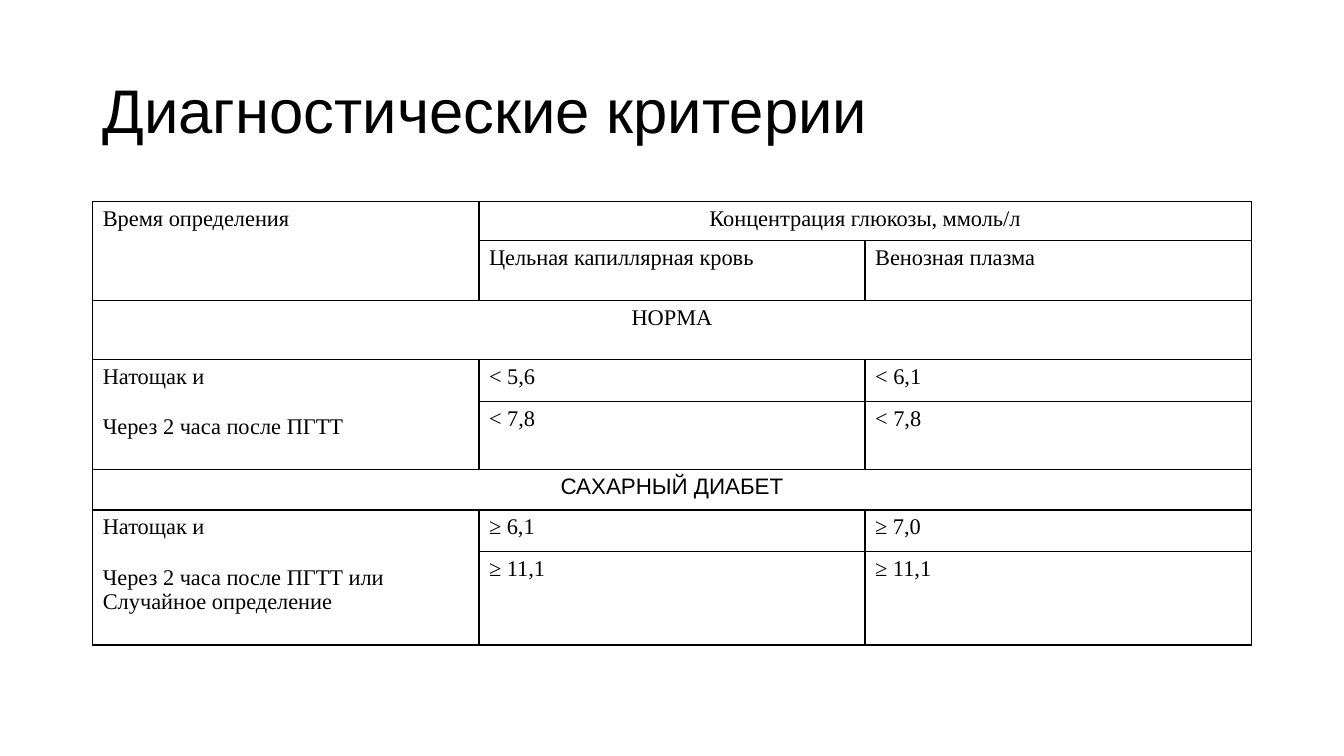
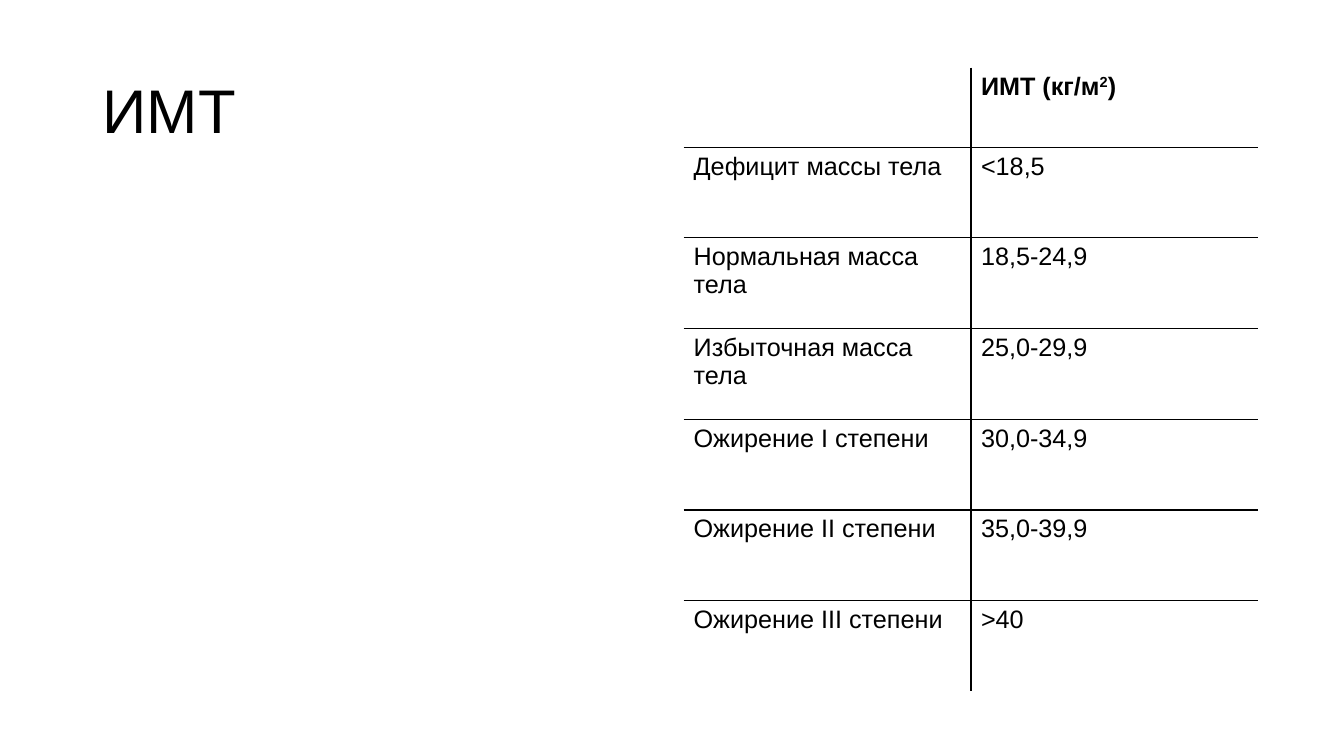
from dataclasses import dataclass
from typing import Any

from lxml import etree
from pptx import Presentation
from pptx import util as u
from pptx.dml.color import RGBColor
from pptx.enum import text
from pptx.oxml import ns

BLACK, WHITE = "000000", "FFFFFF"
SANS, SERIF = "Arial", "Times New Roman"
TITLE_FONT = {"name": SANS, "size": u.Pt(44), "bold": False}
TITLE_BOX = (0.92, 0.4, 11.5, 1.45)
CENTER = text.PP_ALIGN.CENTER


@dataclass(frozen=True)
class Run:
    text: str
    superscript: bool = False


@dataclass(frozen=True)
class Line:
    runs: tuple[Run, ...]
    gap: float = 0


@dataclass(frozen=True)
class Cell:
    row: int
    column: int
    lines: tuple[Line, ...]
    row_span: int = 1
    column_span: int = 1
    align: Any = text.PP_ALIGN.LEFT
    font: str = SANS
    bold: bool = False


@dataclass(frozen=True)
class TableSpec:
    left: float
    top: float
    columns: tuple[float, ...]
    rows: tuple[float, ...]
    size: float
    framed: bool
    cells: list[Cell]


def line(content: str, gap: float = 0) -> Line:
    return Line((Run(content),), gap)


def color(value: str) -> RGBColor:
    return RGBColor.from_string(value)


def set_values(target: Any, values: dict[str, Any]) -> None:
    for name, value in values.items():
        setattr(target, name, value)


def write_line(paragraph: Any, content: Line, font: dict[str, Any]) -> None:
    for part in content.runs:
        run = paragraph.add_run()
        run.text = part.text
        set_values(run.font, font)
        run.font.color.rgb = color(BLACK)
        if part.superscript:
            run._r.get_or_add_rPr().set("baseline", "30000")


def set_borders(cell: Any, visible: dict[str, bool]) -> None:
    """Draw a one-point line on each visible side and none on the others."""
    properties = cell._tc.get_or_add_tcPr()
    for index, (side, shown) in enumerate(visible.items()):
        border = etree.Element(ns.qn(f"a:ln{side}"), w=str(u.Pt(1)))
        if shown:
            fill = etree.SubElement(border, ns.qn("a:solidFill"))
            etree.SubElement(fill, ns.qn("a:srgbClr"), val=BLACK)
        else:
            etree.SubElement(border, ns.qn("a:noFill"))
        properties.insert(index, border)


def add_title(slide: Any, title: str) -> None:
    frame = slide.shapes.add_textbox(*map(u.Inches, TITLE_BOX)).text_frame
    set_values(frame, {"word_wrap": True, "vertical_anchor": text.MSO_ANCHOR.MIDDLE})
    paragraph = frame.paragraphs[0]
    paragraph.line_spacing = 0.9
    write_line(paragraph, line(title), TITLE_FONT)


def fill_cell(table: Any, content: Cell, size: float) -> None:
    cell = table.cell(content.row, content.column)
    if content.row_span * content.column_span > 1:
        cell.merge(table.cell(content.row + content.row_span - 1,
                              content.column + content.column_span - 1))
    font = {"name": content.font, "size": u.Pt(size), "bold": content.bold}
    for index, item in enumerate(content.lines):
        frame = cell.text_frame
        paragraph = frame.add_paragraph() if index else frame.paragraphs[0]
        set_values(paragraph, {"alignment": content.align, "space_before": u.Pt(item.gap)})
        write_line(paragraph, item, font)


def add_table(slide: Any, spec: TableSpec) -> None:
    box = (spec.left, spec.top, sum(spec.columns), sum(spec.rows))
    table = slide.shapes.add_table(len(spec.rows), len(spec.columns),
                                   *map(u.Inches, box)).table
    set_values(table, {"first_row": False, "horz_banding": False})
    for column, width in zip(table.columns, spec.columns):
        column.width = u.Inches(width)
    for row, height in zip(table.rows, spec.rows):
        row.height = u.Inches(height)
    last_row, last_column = len(spec.rows) - 1, len(spec.columns) - 1
    for r in range(last_row + 1):
        for c in range(last_column + 1):
            cell = table.cell(r, c)
            cell.fill.solid()
            cell.fill.fore_color.rgb = color(WHITE)
            set_borders(cell, {"L": spec.framed or c > 0,
                               "R": spec.framed or c < last_column,
                               "T": spec.framed or r > 0,
                               "B": spec.framed or r < last_row})
    for content in spec.cells:
        fill_cell(table, content, spec.size)


def criteria_table() -> TableSpec:
    fasting = line("Натощак и")
    labels = [
        Cell(0, 0, (line("Время определения"),), row_span=2, font=SERIF),
        Cell(0, 1, (line("Концентрация глюкозы, ммоль/л"),), column_span=2,
             align=CENTER, font=SERIF),
        Cell(2, 0, (line("НОРМА"),), column_span=3, align=CENTER, font=SERIF),
        Cell(3, 0, (fasting, line("Через 2 часа после ПГТТ", 18)),
             row_span=2, font=SERIF),
        Cell(5, 0, (line("САХАРНЫЙ ДИАБЕТ"),), column_span=3, align=CENTER),
        Cell(6, 0, (fasting, line("Через 2 часа после ПГТТ или", 18),
                    line("Случайное определение")), row_span=2, font=SERIF),
    ]
    values = {
        1: ("Цельная капиллярная кровь", "Венозная плазма"),
        3: ("< 5,6", "< 6,1"),
        4: ("< 7,8", "< 7,8"),
        6: ("≥ 6,1", "≥ 7,0"),
        7: ("≥ 11,1", "≥ 11,1"),
    }
    cells = labels + [Cell(row, column, (line(value),), font=SERIF)
                      for row, pair in values.items()
                      for column, value in enumerate(pair, 1)]
    return TableSpec(0.92, 2, (3.83,) * 3,
                     (0.39, 0.59, 0.59, 0.41, 0.68, 0.4, 0.41, 0.93),
                     16, True, cells)


def bmi_table() -> TableSpec:
    heading = Line((Run("ИМТ (кг/м"), Run("2", True), Run(")")))
    categories = [
        ("Дефицит массы тела", "<18,5"),
        ("Нормальная масса тела", "18,5-24,9"),
        ("Избыточная масса тела", "25,0-29,9"),
        ("Ожирение I степени", "30,0-34,9"),
        ("Ожирение II степени", "35,0-39,9"),
        ("Ожирение III степени", ">40"),
    ]
    cells = [Cell(0, 1, (heading,), bold=True)]
    cells += [Cell(row, column, (line(value),))
              for row, pair in enumerate(categories, 1)
              for column, value in enumerate(pair)]
    return TableSpec(6.78, 0.67, (2.85,) * 2, (0.79,) + (0.9,) * len(categories),
                     18, False, cells)


def main() -> None:
    presentation = Presentation()
    set_values(presentation, {"slide_width": u.Inches(13.33),
                              "slide_height": u.Inches(7.5)})
    for title, spec in (("Диагностические критерии", criteria_table()),
                        ("ИМТ", bmi_table())):
        slide = presentation.slides.add_slide(presentation.slide_layouts[6])
        slide.background.fill.solid()
        slide.background.fill.fore_color.rgb = color(WHITE)
        add_title(slide, title)
        add_table(slide, spec)
    presentation.save("out.pptx")


if __name__ == "__main__":
    main()
